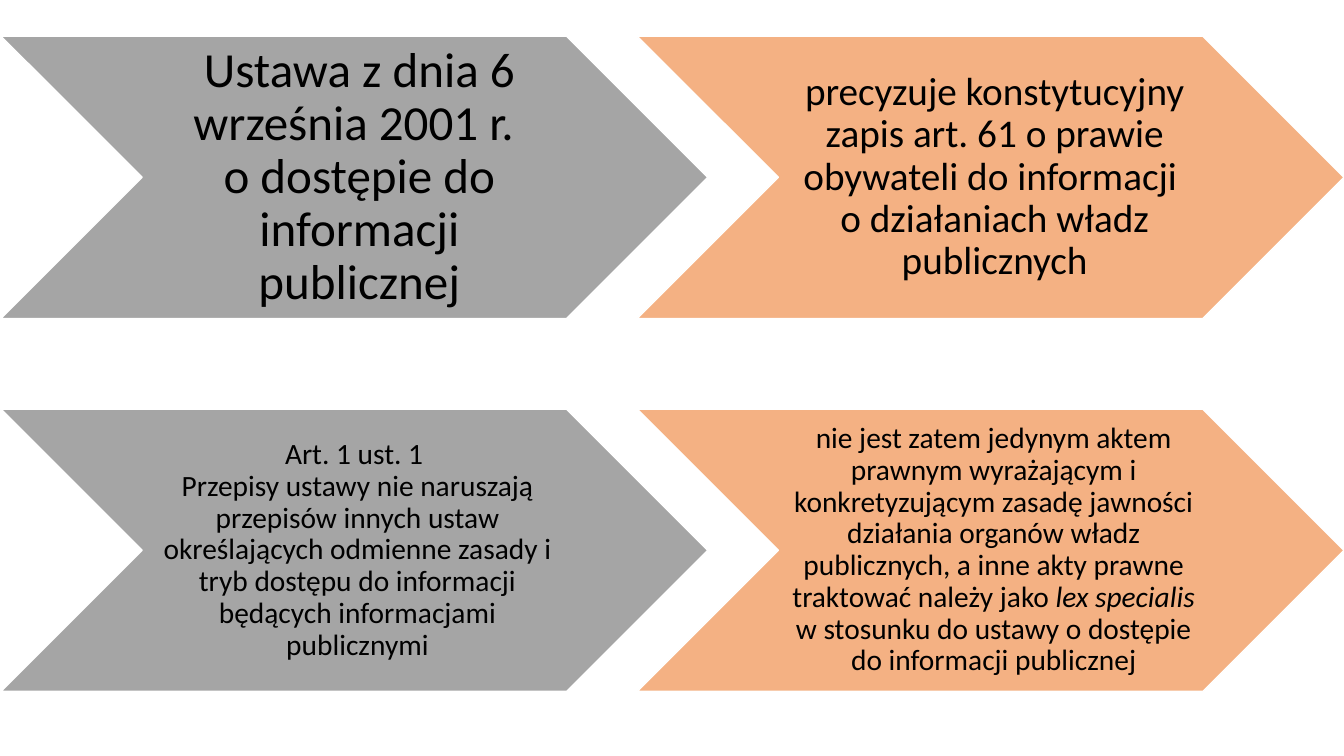
from pptx import Presentation
from pptx.dml.color import RGBColor
from pptx.enum.shapes import MSO_SHAPE
from pptx.enum.text import MSO_ANCHOR, PP_ALIGN
from pptx.util import Inches, Pt

CHEVRON = MSO_SHAPE.CHEVRON
MIDDLE = MSO_ANCHOR.MIDDLE
CENTER = PP_ALIGN.CENTER

COLORS = {"gray": "A5A5A5", "orange": "F4B183", "white": "FFFFFF", "black": "000000"}

# Arrow grid
LEFT, TOP = 0.01, 0.36
COL_STEP, ROW_STEP = 6.31, 3.7
ARROW_W, ARROW_H = 7.01, 2.8
TEXT_W = ARROW_W - ARROW_H
COLUMN_FILLS = ("gray", "orange")

# Each arrow: text pieces as (text, italic), font size, base margin
ROWS = [
    [
        ([("Ustawa z dnia 6 września 2001 r. \no dostępie do informacji publicznej", False)],
         35, 0.05),
        ([("precyzuje konstytucyjny zapis art. 61 o prawie obywateli do informacji "
           "\no działaniach władz publicznych", False)],
         28, 0.04),
    ],
    [
        ([("Art. 1 ust. 1 \nPrzepisy ustawy nie naruszają przepisów innych ustaw "
           "określających odmienne zasady i tryb dostępu do informacji będących "
           "informacjami publicznymi", False)],
         21, 0.03),
        ([("nie jest zatem jedynym aktem prawnym wyrażającym i konkretyzującym zasadę "
           "jawności działania organów władz publicznych, a inne akty prawne "
           "traktować należy jako ", False),
          ("lex specialis ", True),
          ("w stosunku do ustawy o dostępie do informacji publicznej", False)],
         21, 0.03),
    ],
]


class SlideBuilder:
    font = "Calibri"

    def __init__(self, slide):
        self.slide = slide

    def color(self, name):
        return RGBColor.from_string(COLORS[name])

    def arrow(self, x, y, fill):
        sp = self.slide.shapes.add_shape(
            CHEVRON, Inches(x), Inches(y), Inches(ARROW_W), Inches(ARROW_H))
        sp.shadow.inherit = False
        sp.fill.solid()
        sp.fill.fore_color.rgb = self.color(fill)
        sp.line.color.rgb = self.color("white")
        sp.line.width = Pt(1)

    def label(self, x, y, pieces, size, margin):
        box = self.slide.shapes.add_textbox(
            Inches(x), Inches(y), Inches(TEXT_W), Inches(ARROW_H))
        tf = box.text_frame
        tf.word_wrap = True
        tf.vertical_anchor = MIDDLE
        tf.margin_left = Inches(3 * margin)
        tf.margin_top = tf.margin_right = tf.margin_bottom = Inches(margin)

        p = tf.paragraphs[0]
        p.text = pieces[0][0]
        p.alignment = CENTER
        p.line_spacing = 0.9
        for text, italic in pieces[1:]:
            r = p.add_run()
            r.text = text
            r.font.italic = italic
        for r in p.runs:
            r.font.name = self.font
            r.font.size = Pt(size)
            r.font.color.rgb = self.color("black")


def main():
    prs = Presentation()
    prs.slide_width, prs.slide_height = Inches(13.33), Inches(7.5)
    builder = SlideBuilder(prs.slides.add_slide(prs.slide_layouts[6]))

    # Two rows of arrows with their labels
    for row, arrows in enumerate(ROWS):
        y = TOP + row * ROW_STEP
        for col, (pieces, size, margin) in enumerate(arrows):
            x = LEFT + col * COL_STEP
            builder.arrow(x, y, COLUMN_FILLS[col])
            builder.label(x + ARROW_H / 2, y, pieces, size, margin)

    prs.save("out.pptx")


if __name__ == "__main__":
    main()
